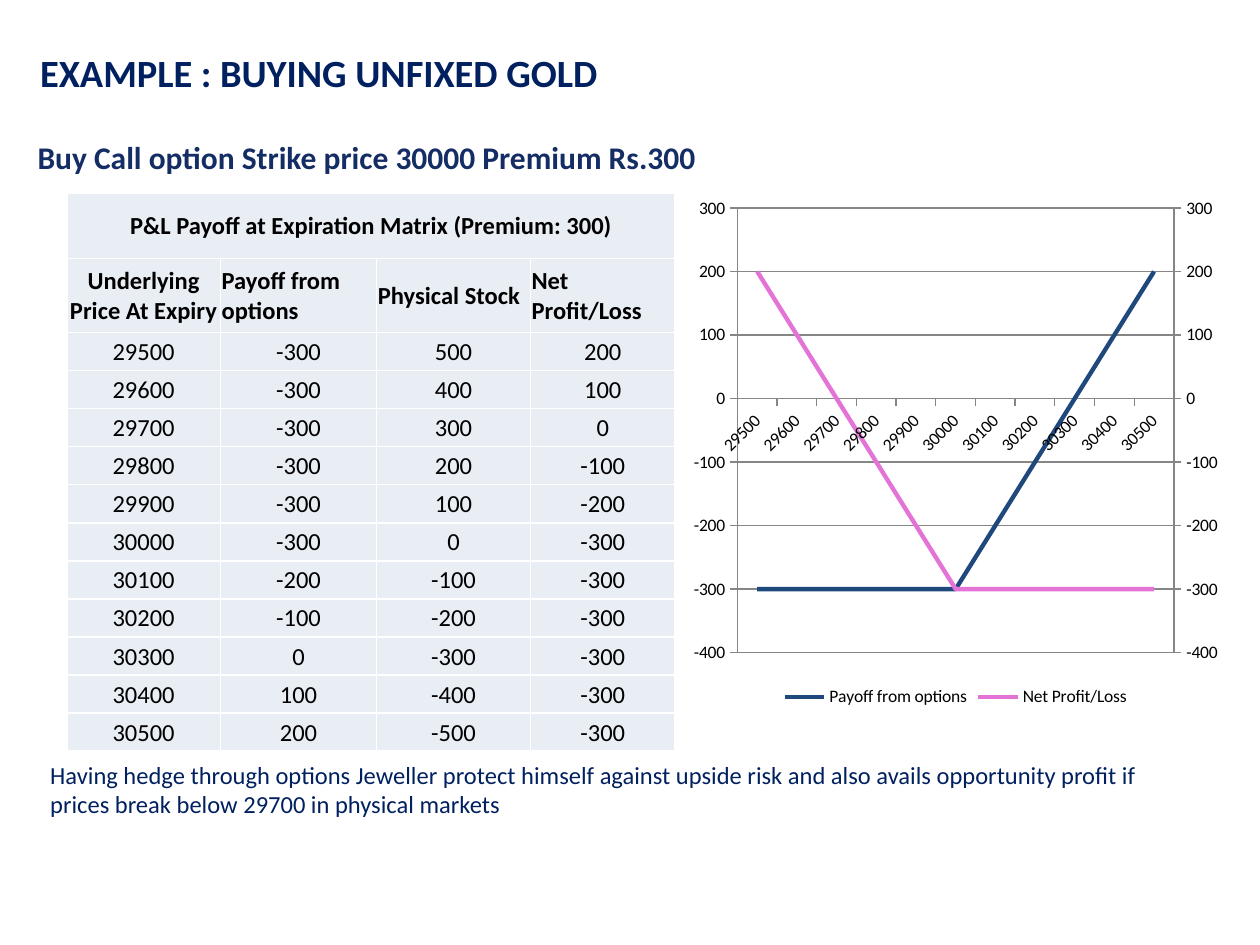
import copy

import pptx
import pptx.chart.data
import pptx.dml.color
import pptx.enum.chart
import pptx.enum.text
import pptx.oxml
import pptx.oxml.ns
import pptx.util

Inches, Pt = pptx.util.Inches, pptx.util.Pt
qn = pptx.oxml.ns.qn
ALIGN = pptx.enum.text.PP_ALIGN
MIDDLE = pptx.enum.text.MSO_ANCHOR.MIDDLE
NAVY, GREY = "002060", "868686"

STRIKE, PREMIUM = 30000, 300
PRICES = range(29500, 30501, 100)
STOCK = [STRIKE - price for price in PRICES]
PAYOFF = [max(price - STRIKE, 0) - PREMIUM for price in PRICES]
NET = [sum(pair) for pair in zip(STOCK, PAYOFF)]


def color(code):
    return pptx.dml.color.RGBColor.from_string(code)


def style(font, size, code, bold=False):
    font.name, font.size, font.bold = "Calibri", Pt(size), bold
    font.color.rgb = color(code)


def add_text(slide, box, text, size, code=NAVY, bold=False, anchor=None):
    frame = slide.shapes.add_textbox(*map(Inches, box)).text_frame
    frame.word_wrap = True
    frame.vertical_anchor = anchor
    frame.text = text
    style(frame.paragraphs[0].font, size, code, bold)


def fill_cell(cell, text, bold, align):
    cell.margin_left = cell.margin_right = cell.margin_top = Inches(0.01)
    cell.margin_bottom = 0
    cell.vertical_anchor = MIDDLE
    cell.text = text
    para = cell.text_frame.paragraphs[0]
    para.alignment = align
    style(para.font, 14, "000000", bold)
    props = cell._tc.get_or_add_tcPr()
    for side in ("lnL", "lnR", "lnT", "lnB"):
        props.append(pptx.oxml.parse_xml(
            f'<a:{side} {pptx.oxml.ns.nsdecls("a")} w="12700"><a:solidFill>'
            f'<a:srgbClr val="FFFFFF"/></a:solidFill></a:{side}>'))
    cell.fill.solid()
    cell.fill.fore_color.rgb = color("E9EDF4")


def add_matrix(slide, box):
    rows = [("P&L Payoff at Expiration Matrix (Premium: 300)", "", "", ""),
            ("Underlying Price At Expiry", "Payoff from options",
             "Physical Stock", "Net Profit/Loss"),
            *zip(PRICES, PAYOFF, STOCK, NET)]
    table = slide.shapes.add_table(len(rows), 4, *map(Inches, box)).table
    table.first_row = table.horz_banding = False
    for col, width in zip(table.columns, (1.22, 1.24, 1.22, 1.15)):
        col.width = Inches(width)
    for r, row in enumerate(rows):
        table.rows[r].height = Inches({0: 0.52, 1: 0.59}.get(r, 0.302))
        for c, value in enumerate(row):
            left = r == 1 and c > 0
            fill_cell(table.cell(r, c), str(value), r < 2,
                      ALIGN.LEFT if left else ALIGN.CENTER)
    table.cell(0, 0).merge(table.cell(0, 3))


def add_right_axis(chart):
    """Move the last series to a second value axis on the right."""
    area = chart._chartSpace.chart.plotArea
    first = area.find(qn("c:lineChart"))
    second = copy.deepcopy(first)
    first.remove(first.findall(qn("c:ser"))[-1])
    second.remove(second.find(qn("c:ser")))
    first.addnext(second)
    cat, val = (copy.deepcopy(area.find(qn(tag))) for tag in ("c:catAx", "c:valAx"))
    for axis, own, other in ((cat, "501", "502"), (val, "502", "501")):
        axis.find(qn("c:axId")).set("val", own)
        axis.find(qn("c:crossAx")).set("val", other)
    for ref, own in zip(second.findall(qn("c:axId")), ("501", "502")):
        ref.set("val", own)
    cat.find(qn("c:delete")).set("val", "1")
    val.remove(val.find(qn("c:majorGridlines")))
    val.find(qn("c:axPos")).set("val", "r")
    val.find(qn("c:crosses")).set("val", "max")
    area.find(qn("c:valAx")).addnext(cat)
    cat.addnext(val)


def add_graph(slide, box):
    kinds = pptx.enum.chart
    data = pptx.chart.data.CategoryChartData()
    data.categories = [str(price) for price in PRICES]
    data.add_series("Payoff from options", PAYOFF)
    data.add_series("Net Profit/Loss", NET)
    chart = slide.shapes.add_chart(
        kinds.XL_CHART_TYPE.LINE, *map(Inches, box), data).chart
    style(chart.font, 10, "000000")
    chart.has_title = False
    chart.has_legend = True
    chart.legend.position = kinds.XL_LEGEND_POSITION.BOTTOM
    chart.legend.include_in_layout = False
    chart.plots[0].vary_by_categories = False
    for series, code in zip(chart.plots[0].series, ("1F497D", "E373D6")):
        series.smooth = False
        series.format.line.width = Pt(2.5)
        series.format.line.color.rgb = color(code)
    value, category = chart.value_axis, chart.category_axis
    value.minimum_scale, value.maximum_scale, value.major_unit = -400, 300, 100
    value.has_major_gridlines = True
    category.has_major_gridlines = False
    style(category.tick_labels.font, 10, "000000")
    category._element.find(qn("c:txPr")).find(qn("a:bodyPr")).set("rot", "-2700000")
    for axis in (value, category):
        axis.major_tick_mark = kinds.XL_TICK_MARK.OUTSIDE
    for part in (value, category, value.major_gridlines):
        part.format.line.color.rgb = color(GREY)
        part.format.line.width = Pt(0.75)
    add_right_axis(chart)


def main():
    deck = pptx.Presentation()
    deck.slide_width, deck.slide_height = Inches(10), Inches(7.5)
    slide = deck.slides.add_slide(deck.slide_layouts[6])
    add_text(slide, (0.22, 0.3, 7.24, 0.55), "EXAMPLE : BUYING UNFIXED GOLD",
             22, bold=True, anchor=MIDDLE)
    add_text(slide, (0.3, 5.98, 9.17, 0.57),
             "Having hedge through options Jeweller protect himself against "
             "upside risk and also avails opportunity profit if prices break "
             "below 29700 in physical markets", 14)
    add_text(slide, (0.2, 1.05, 7.74, 0.4),
             "Buy Call option Strike price 30000 Premium Rs.300",
             18, "152D65", bold=True)
    add_matrix(slide, (0.53, 1.53, 4.82, 4.44))
    add_graph(slide, (5.42, 1.49, 4.33, 4.16))
    deck.save("out.pptx")


if __name__ == "__main__":
    main()
